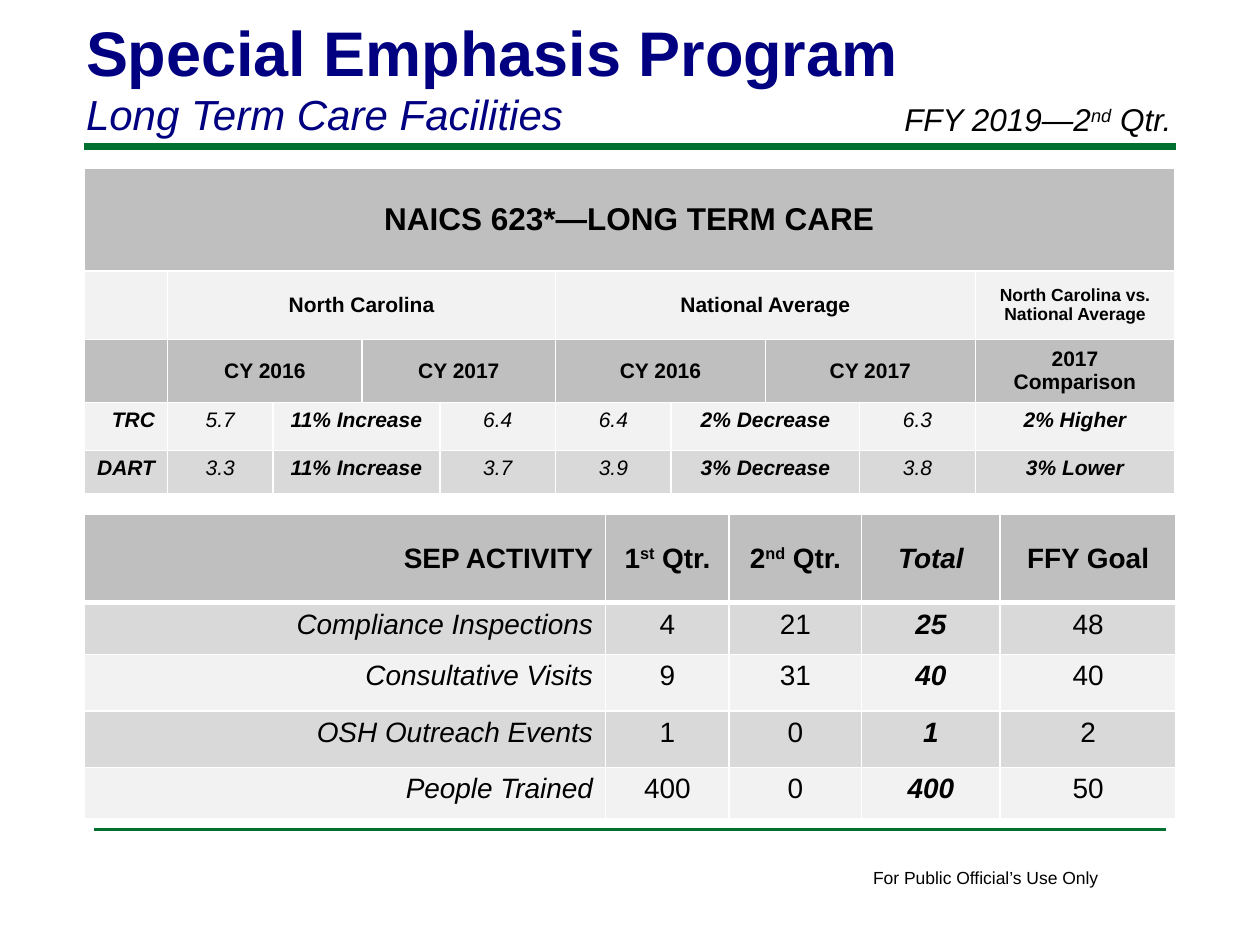
import pptx
import pptx.util
import pptx.dml.color
import pptx.enum.shapes
import pptx.enum.text
import pptx.oxml.ns
import lxml.etree

Cm = pptx.util.Cm
Pt = pptx.util.Pt
ALIGN = pptx.enum.text.PP_ALIGN
ANCHOR = pptx.enum.text.MSO_ANCHOR

GREEN, NAVY, BLACK, WHITE = "007030", "000080", "000000", "FFFFFF"
DARK, MID, LIGHT = "BFBFBF", "D9D9D9", "F2F2F2"
LEFT = 1.69

# None marks a cell that belongs to the merged cell on its left
RATES = [
    ["NAICS 623*—LONG TERM CARE"] + [None] * 9,
    ["", "North Carolina", None, None, None, "National Average", None, None, None,
     "North Carolina vs. National Average"],
    ["", "CY 2016", None, "CY 2017", None, "CY 2016", None, "CY 2017", None, "2017 Comparison"],
    ["TRC", "5.7", "11% Increase", None, "6.4", "6.4", "2% Decrease", None, "6.3", "2% Higher"],
    ["DART", "3.3", "11% Increase", None, "3.7", "3.9", "3% Decrease", None, "3.8", "3% Lower"],
]
# Carets enclose superscript
GOALS = [
    ["SEP ACTIVITY", "1^st^ Qtr.", "2^nd^ Qtr.", "Total", "FFY Goal"],
    ["Compliance Inspections", "4", "21", "25", "48"],
    ["Consultative Visits", "9", "31", "40", "40"],
    ["OSH Outreach Events", "1", "0", "1", "2"],
    ["People Trained", "400", "0", "400", "50"],
]


def color(code):
    return pptx.dml.color.RGBColor.from_string(code)


def style(para, size, tint=BLACK, bold=False, slant=False):
    for run in para.runs:
        font = run.font
        font.name, font.size = "Arial", Pt(size)
        font.bold, font.italic = bold, slant
        font.color.rgb = color(tint)


def write(para, text):
    """Fill a paragraph, raising the parts between carets."""
    for i, part in enumerate(text.split("^")):
        run = para.add_run()
        run.text = part
        if i % 2:
            run.font._element.set("baseline", "30000")


def add_rule(slide, x1, x2, y, width):
    line = slide.shapes.add_connector(
        pptx.enum.shapes.MSO_CONNECTOR.STRAIGHT, Cm(x1), Cm(y), Cm(x2), Cm(y))
    line.line.color.rgb = color(GREEN)
    line.line.width = Pt(width)
    lxml.etree.SubElement(line._element.spPr, pptx.oxml.ns.qn("a:effectLst"))


def add_label(slide, box, text, size, wrap=True, slant=False):
    frame = slide.shapes.add_textbox(*map(Cm, box)).text_frame
    frame.word_wrap = wrap
    write(frame.paragraphs[0], text)
    style(frame.paragraphs[0], size, slant=slant)


def set_title(slide):
    title = slide.shapes.title
    title.left, title.top, title.width, title.height = map(Cm, (1.48, 0.14, 20.96, 2.83))
    frame = title.text_frame
    frame.text = "Special Emphasis Program\nLong Term Care Facilities"
    frame.vertical_anchor = ANCHOR.TOP
    frame.auto_size = pptx.enum.text.MSO_AUTO_SIZE.NONE
    for para in frame.paragraphs:
        para.alignment = ALIGN.LEFT
    style(frame.paragraphs[0], 36, NAVY, bold=True)
    style(frame.paragraphs[1], 24, NAVY, slant=True)


def set_edges(cell, base):
    """Draw white borders; base is the width of the lower one."""
    qn = pptx.oxml.ns.qn
    props = cell._tc.get_or_add_tcPr()
    for side, width in (("L", 1), ("R", 1), ("T", 1), ("B", base)):
        edge = lxml.etree.SubElement(props, qn("a:ln" + side), w=str(Pt(width)))
        fill = lxml.etree.SubElement(edge, qn("a:solidFill"))
        lxml.etree.SubElement(fill, qn("a:srgbClr"), val=WHITE)


def add_grid(slide, top, cols, rows, data, fills, look, base=1):
    """Add a table; look(row, col) gives size, bold, slant, align and anchor."""
    table = slide.shapes.add_table(
        len(rows), len(cols), Cm(LEFT), Cm(top), Cm(sum(cols)), Cm(sum(rows))).table
    table.first_row = table.horz_banding = False
    for col, width in zip(table.columns, cols):
        col.width = Cm(width)
    for row, height in zip(table.rows, rows):
        row.height = Cm(height)
    for r, texts in enumerate(data):
        for c, text in enumerate(texts):
            cell = table.cell(r, c)
            set_edges(cell, base if r == 0 else 1)
            cell.fill.solid()
            cell.fill.fore_color.rgb = color(fills[r])
            if text is None:
                continue
            end = c
            while end + 1 < len(texts) and texts[end + 1] is None:
                end += 1
            if end > c:
                cell.merge(table.cell(r, end))
            if text:
                size, bold, slant, align, anchor = look(r, c)
                para = cell.text_frame.paragraphs[0]
                write(para, text)
                para.alignment = align
                cell.vertical_anchor = anchor
                style(para, size, bold=bold, slant=slant)


def rate_look(r, c):
    head = r < 3
    size = 18 if r == 0 else 10 if (r, c) == (1, 9) else 12
    align = ALIGN.RIGHT if r > 2 and c == 0 else ALIGN.CENTER
    return size, head or c in (0, 2, 6, 9), not head, align, ANCHOR.MIDDLE if head else ANCHOR.TOP


def goal_look(r, c):
    head, total = r == 0, c == 3
    align = ALIGN.RIGHT if c == 0 else ALIGN.CENTER
    slant = total or (c == 0 and not head)
    return 16, head or total, slant, align, ANCHOR.MIDDLE if head else ANCHOR.TOP


def main():
    deck = pptx.Presentation()
    deck.slide_width, deck.slide_height = Cm(25.4), Cm(19.05)
    slide = deck.slides.add_slide(deck.slide_layouts[5])

    # Rules and footer
    add_rule(slide, LEFT, 23.71, 2.96, 4)
    add_rule(slide, 1.9, 23.5, 16.72, 2)
    add_label(slide, (17.35, 17.35, 5.1, 0.68), "For Public Official’s Use Only", 10, wrap=False)

    # Heading
    set_title(slide)
    add_label(slide, (17.98, 1.9, 6.35, 1.02), "FFY 2019—2^nd^ Qtr.", 18, slant=True)

    # Injury rates
    add_grid(slide, 3.39, [1.69, 2.12, 1.8, 1.57, 2.33, 2.33, 1.9, 1.9, 2.33, 4.02],
             [2.07, 1.38, 1.27, 0.97, 0.87], RATES,
             [DARK, LIGHT, DARK, LIGHT, MID], rate_look)

    # Activity against goals
    add_grid(slide, 10.37, [10.52, 2.49, 2.67, 2.79, 3.55],
             [1.78, 1.04, 1.14, 1.14, 1.04], GOALS,
             [DARK, MID, LIGHT, MID, LIGHT], goal_look, base=3)

    deck.save("out.pptx")


if __name__ == "__main__":
    main()
